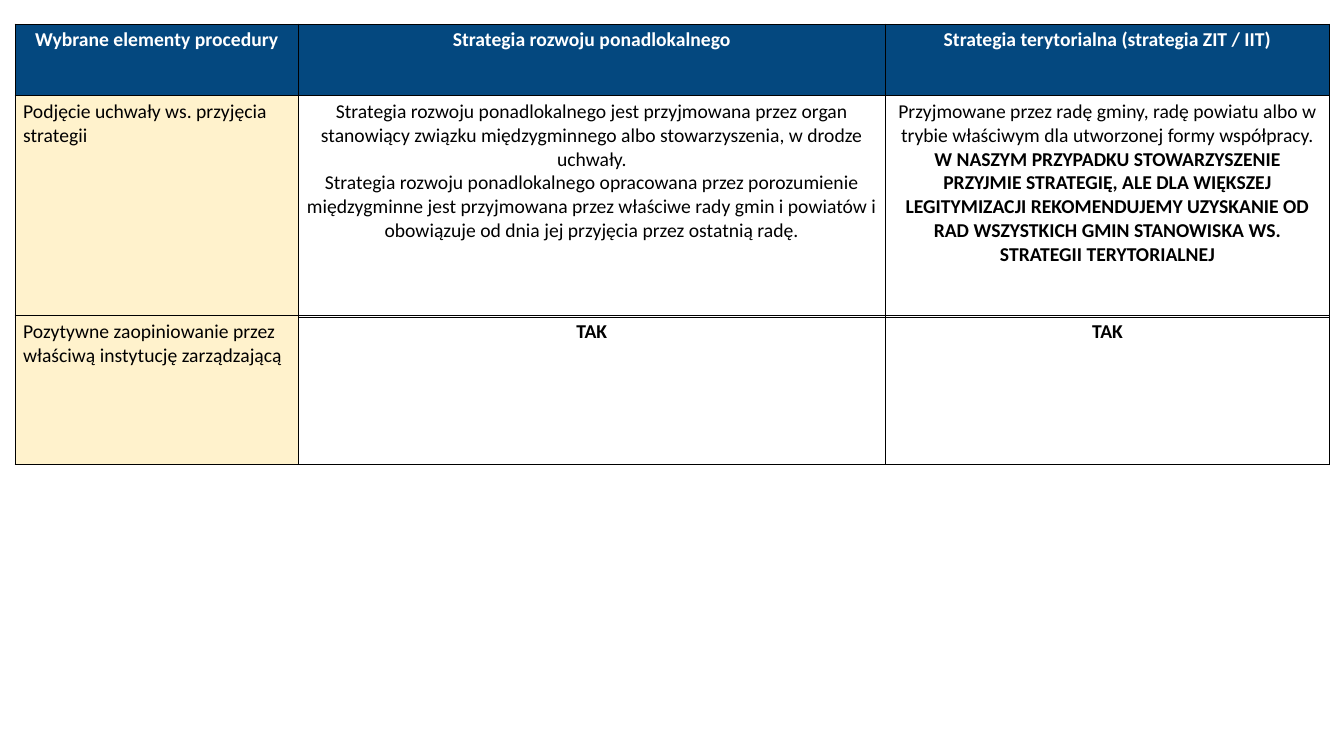
from lxml.etree import SubElement
from pptx import Presentation
from pptx.dml.color import RGBColor
from pptx.enum.text import PP_ALIGN
from pptx.oxml.ns import qn
from pptx.util import Inches, Pt

COLORS = {"navy": "04487F", "cream": "FFF2CC", "white": "FFFFFF", "black": "000000"}
LEFT = 0.15
COLUMNS = [2.81, 5.82, 4.41]

# Each cell is a list of paragraphs, each paragraph a list of (text, bold) spans
HEADERS = [
    [[("Wybrane elementy procedury", True)]],
    [[("Strategia rozwoju ponadlokalnego", True)]],
    [[("Strategia terytorialna (strategia ZIT / IIT)", True)]],
]
ADOPTION = [
    [[("Podjęcie uchwały ws. przyjęcia strategii", False)]],
    [
        [("Strategia rozwoju ponadlokalnego jest przyjmowana przez organ stanowiący "
          "związku międzygminnego albo stowarzyszenia, w drodze uchwały.", False)],
        [("Strategia rozwoju ponadlokalnego opracowana przez porozumienie międzygminne "
          "jest przyjmowana przez właściwe rady gmin i powiatów i obowiązuje od dnia "
          "jej przyjęcia przez ostatnią radę.", False)],
    ],
    [[
        ("Przyjmowane przez radę gminy, radę powiatu albo w trybie właściwym dla "
         "utworzonej formy współpracy. ", False),
        ("W NASZYM PRZYPADKU STOWARZYSZENIE PRZYJMIE STRATEGIĘ, ALE DLA WIĘKSZEJ "
         "LEGITYMIZACJI REKOMENDUJEMY UZYSKANIE OD RAD WSZYSTKICH GMIN STANOWISKA WS. "
         "STRATEGII TERYTORIALNEJ", True),
    ]],
]
OPINION = [
    [[("Pozytywne zaopiniowanie przez właściwą instytucję zarządzającą", False)]],
    [[("TAK", True)]],
    [[("TAK", True)]],
]


class ProcedurePage:
    """Holds the text style and the current slide."""

    def __init__(self, deck, font="Calibri", size=14, border=0.86):
        self.page = deck.slides.add_slide(deck.slide_layouts[6])
        self.font, self.size, self.border = font, size, border

    def add_borders(self, cell):
        properties = cell._tc.get_or_add_tcPr()
        for side in ("lnL", "lnR", "lnT", "lnB"):
            line = SubElement(properties, qn(f"a:{side}"), w=str(Pt(self.border)))
            fill = SubElement(line, qn("a:solidFill"))
            SubElement(fill, qn("a:srgbClr"), val=COLORS["black"])

    def fill_cell(self, cell, paragraphs, fill, color, align):
        cell.margin_left = cell.margin_right = Inches(0.08)
        cell.margin_top = cell.margin_bottom = Inches(0.04)
        self.add_borders(cell)
        if fill:
            cell.fill.solid()
            cell.fill.fore_color.rgb = RGBColor.from_string(COLORS[fill])
        else:
            cell.fill.background()
        frame = cell.text_frame
        for index, spans in enumerate(paragraphs):
            para = frame.add_paragraph() if index else frame.paragraphs[0]
            para.alignment = align
            para.font.name = self.font
            para.font.size = Pt(self.size)
            para.font.color.rgb = RGBColor.from_string(COLORS[color])
            for text, bold in spans:
                span = para.add_run()
                span.text = text
                span.font.bold = bold

    def add_table(self, top, heights, rows):
        table = self.page.shapes.add_table(
            len(rows), len(COLUMNS), Inches(LEFT), Inches(top),
            Inches(sum(COLUMNS)), Inches(sum(heights))).table
        table.first_row = table.horz_banding = False
        for column, width in zip(table.columns, COLUMNS):
            column.width = Inches(width)
        for row, height, contents in zip(table.rows, heights, rows):
            row.height = Inches(height)
            for index, (cell, paragraphs) in enumerate(zip(row.cells, contents)):
                if contents is HEADERS:
                    style = ("navy", "white", PP_ALIGN.CENTER)
                elif index == 0:
                    style = ("cream", "black", PP_ALIGN.LEFT)
                else:
                    style = (None, "black", PP_ALIGN.CENTER)
                self.fill_cell(cell, paragraphs, *style)


def main():
    deck = Presentation()
    deck.slide_width, deck.slide_height = Inches(13.33), Inches(7.5)
    page = ProcedurePage(deck)
    # Header and adoption of the strategy
    page.add_table(0.24, [0.71, 2.2], [HEADERS, ADOPTION])
    # Opinion of the managing institution
    page.add_table(3.13, [1.48], [OPINION])
    deck.save("out.pptx")


if __name__ == "__main__":
    main()
